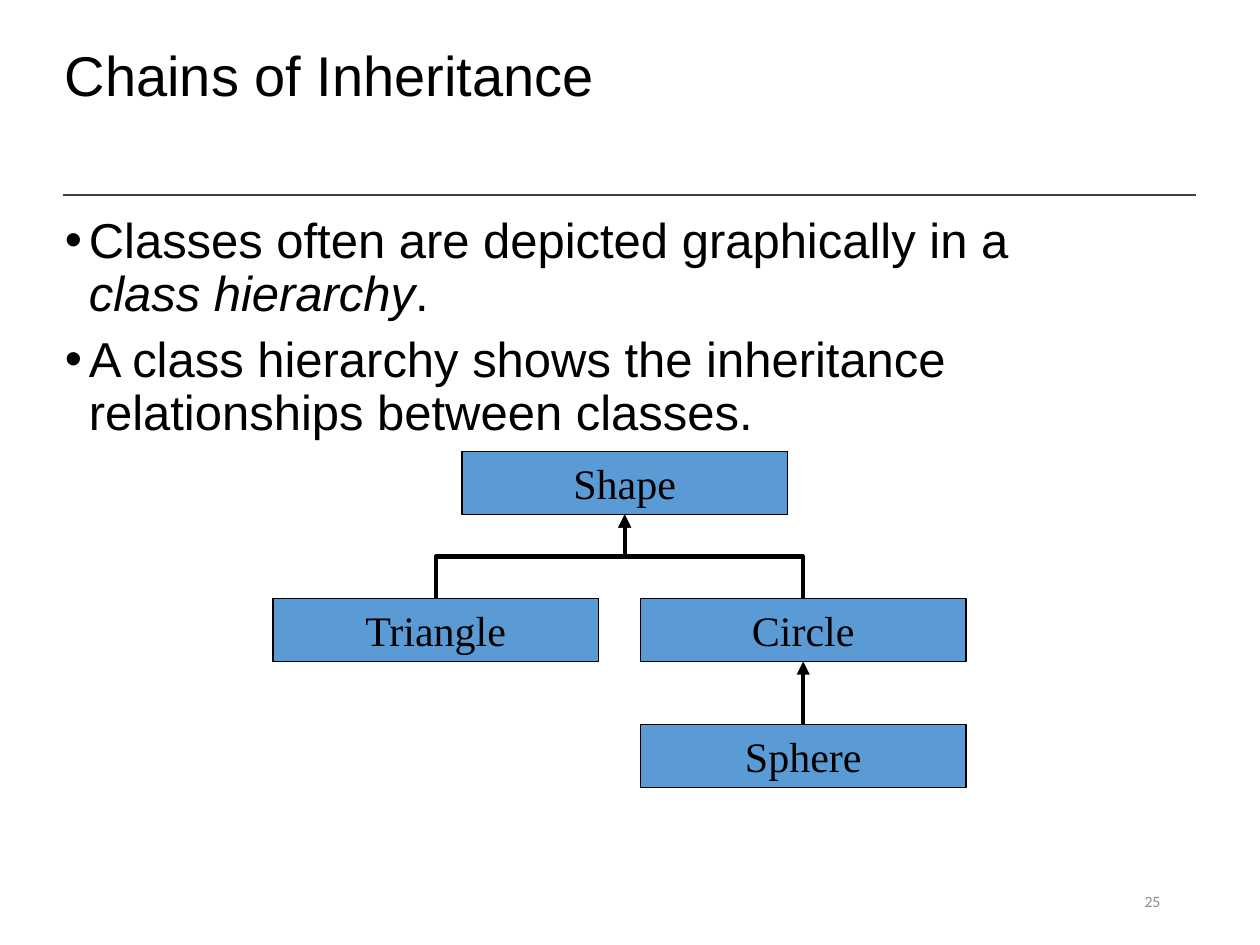
from typing import NamedTuple

from lxml.etree import SubElement
from pptx import Presentation
from pptx.dml.color import RGBColor
from pptx.enum.shapes import MSO_CONNECTOR as CONN, MSO_SHAPE as SHAPE
from pptx.enum.text import MSO_ANCHOR as ANCHOR, PP_ALIGN as ALIGN
from pptx.oxml.ns import qn
from pptx.util import Inches, Pt

CELL = Inches(1) // 12  # grid of 120 columns by 90 rows
BOX_W, BOX_H = 31, 6
TOP, BOTTOM = 0, 2  # connection sites


class Box(NamedTuple):
    name: str
    col: int
    row: int


class Link(NamedTuple):
    child: str
    parent: str


BOXES = [
    Box("Shape", 44, 43),
    Box("Triangle", 26, 57),
    Box("Circle", 61, 57),
    Box("Sphere", 61, 69),
]
LINKS = [Link("Triangle", "Shape"), Link("Circle", "Shape"), Link("Sphere", "Circle")]
BULLETS = [
    [("Classes often are depicted graphically in a ", False),
     ("class hierarchy", True), (".", False)],
    [("A class hierarchy shows the inheritance relationships between classes.", False)],
]


def rgb(value: str) -> RGBColor:
    return RGBColor.from_string(value)


def cells(*counts: float) -> list[int]:
    return [round(n * CELL) for n in counts]


def style(r, size: float, font: str, color: str = "000000") -> None:
    r.font.size, r.font.name = Pt(size), font
    r.font.color.rgb = rgb(color)


def add_text(slide, col, row, width, height, anchor=ANCHOR.TOP):
    tf = slide.shapes.add_textbox(*cells(col, row, width, height)).text_frame
    tf.word_wrap, tf.vertical_anchor = True, anchor
    return tf


def add_bullet(p, parts) -> None:
    p.line_spacing, p.space_before = 0.9, Pt(7.5)
    pPr = p._p.get_or_add_pPr()
    pPr.set("marL", str(Inches(0.19)))
    pPr.set("indent", str(-Inches(0.19)))
    SubElement(pPr, qn("a:buFont")).set("typeface", "Arial")
    SubElement(pPr, qn("a:buChar")).set("char", "•")
    for text, italic in parts:
        r = p.add_run()
        r.text = text
        r.font.italic = italic
        style(r, 28, "Arial")


def add_box(slide, box: Box):
    s = slide.shapes.add_shape(SHAPE.RECTANGLE, *cells(box.col, box.row, BOX_W, BOX_H))
    s.shadow.inherit = False
    s.fill.solid()
    s.fill.fore_color.rgb = rgb("5B9BD5")
    s.line.color.rgb, s.line.width = rgb("000000"), Pt(0.75)
    tf = s.text_frame
    tf.text = box.name
    tf.word_wrap, tf.vertical_anchor = False, ANCHOR.MIDDLE
    p = tf.paragraphs[0]
    p.alignment = ALIGN.CENTER
    style(p.runs[0], 24, "Times New Roman")
    return s


def add_line(slide, kind, ends, color: str, width: float):
    c = slide.shapes.add_connector(kind, *ends)
    c.line.color.rgb, c.line.width = rgb(color), Pt(width)
    SubElement(c._element.spPr, qn("a:effectLst"))
    return c


def add_link(slide, child, parent) -> None:
    x1, y1 = child.left + child.width // 2, child.top
    x2, y2 = parent.left + parent.width // 2, parent.top + parent.height
    kind = CONN.STRAIGHT if x1 == x2 else CONN.ELBOW
    c = add_line(slide, kind, (x1, y1, x2, y2), "000000", 2.5)
    c.begin_connect(child, TOP)
    c.end_connect(parent, BOTTOM)
    SubElement(c.line._get_or_add_ln(), qn("a:tailEnd")).set("type", "triangle")
    if kind == CONN.ELBOW:
        # Turn the elbow so that it leaves and arrives vertically
        run, rise = abs(x2 - x1), y1 - y2
        c.left, c.top = (x1 + x2 - rise) // 2, (y1 + y2 - run) // 2
        c.width, c.height = rise, run
        xfrm = c._element.spPr.xfrm
        xfrm.flipV, xfrm.flipH = False, x1 > x2
        xfrm.set("rot", str((90 if x1 > x2 else 270) * 60000))


def main() -> None:
    prs = Presentation()
    prs.slide_width, prs.slide_height = cells(120, 90)
    slide = prs.slides.add_slide(prs.slide_layouts[6])

    # Rule under the title
    add_line(slide, CONN.STRAIGHT, cells(6, 18.6, 113.9, 18.6), "404040", 1)

    # Title
    p = add_text(slide, 5, 0, 109, 15, ANCHOR.MIDDLE).paragraphs[0]
    p.text, p.line_spacing = "Chains of Inheritance", 0.9
    style(p.runs[0], 32, "Arial")

    # Bullets
    tf = add_text(slide, 5, 20, 102, 24)
    for i, parts in enumerate(BULLETS):
        add_bullet(tf.add_paragraph() if i else tf.paragraphs[0], parts)

    # Class hierarchy
    shapes = {box.name: add_box(slide, box) for box in BOXES}
    for link in LINKS:
        add_link(slide, shapes[link.child], shapes[link.parent])

    # Slide number
    p = add_text(slide, 84.7, 83.4, 27, 4.8, ANCHOR.MIDDLE).paragraphs[0]
    p.text, p.alignment = "25", ALIGN.RIGHT
    style(p.runs[0], 9, "Calibri", "8C8C8C")

    prs.save("out.pptx")


if __name__ == "__main__":
    main()
